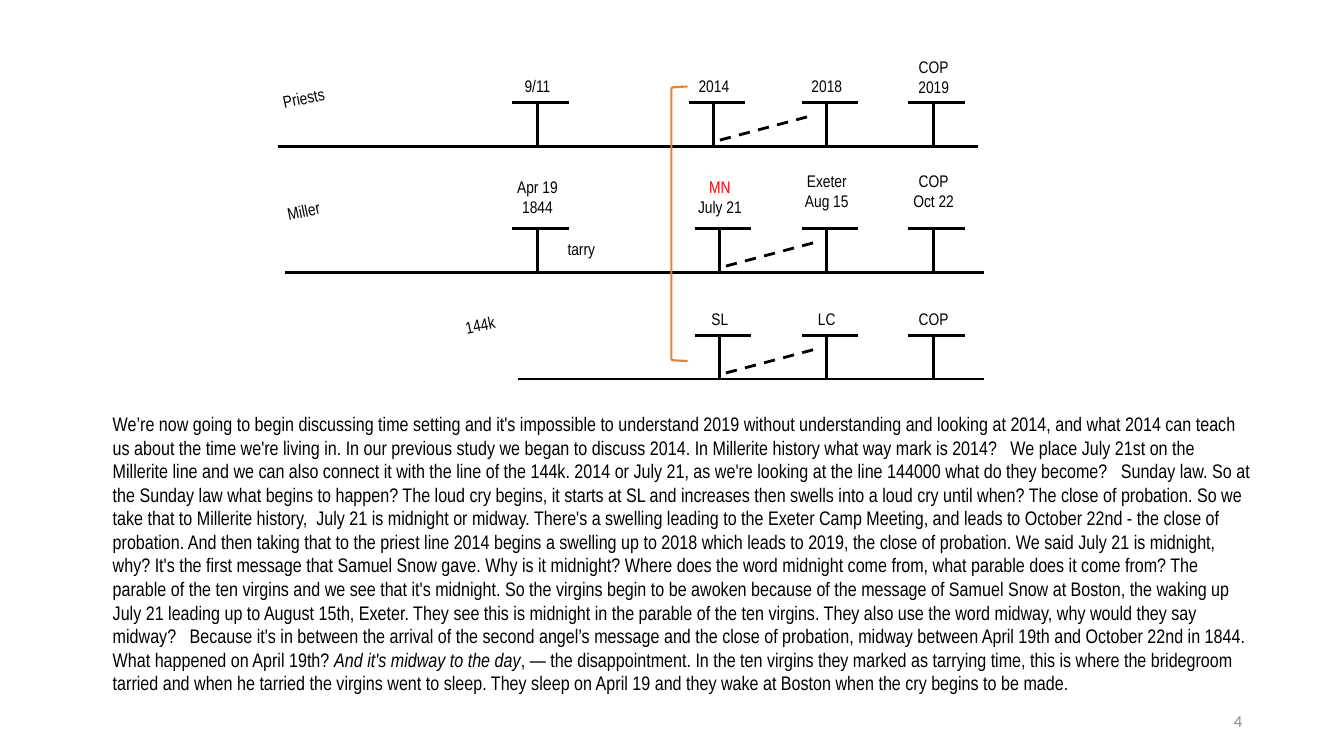
from pptx import Presentation
from pptx.dml.color import RGBColor
from pptx.enum.dml import MSO_LINE
from pptx.enum.shapes import MSO_CONNECTOR, MSO_SHAPE
from pptx.enum.text import MSO_ANCHOR, PP_ALIGN
from pptx.oxml.ns import qn
from pptx.util import Inches, Pt
from lxml.etree import SubElement

BLACK = RGBColor(0, 0, 0)
RED = RGBColor(0xFF, 0, 0)
ORANGE = RGBColor(0xED, 0x7D, 0x31)
GRAY = RGBColor(0x8C, 0x8C, 0x8C)

TIMELINES = [
    {"name": "Priests", "name_at": (2.64, 0.83), "bar": 1.02, "span": (2.76, 9.7),
     "swell": 7.08, "marks": [
         (5.33, 0.31, ["9/11"]), (7.08, 0.31, ["2014"]),
         (8.2, 0.31, ["2018"]), (9.26, 0.5, ["COP", "2019"])]},
    {"name": "Miller", "name_at": (2.64, 1.95), "bar": 2.27, "span": (2.83, 9.76),
     "swell": 7.14, "marks": [
         (5.33, 0.56, ["Apr 19 1844"]), (7.14, 0.56, ["MN", "July 21"]),
         (8.2, 0.62, ["Exeter", "Aug 15"]), (9.26, 0.62, ["COP", "Oct 22"])]},
    {"name": "144k", "name_at": (4.39, 3.08), "bar": 3.33, "span": (5.14, 9.76),
     "swell": 7.14, "marks": [
         (7.14, 0.31, ["SL"]), (8.2, 0.31, ["LC"]), (9.26, 0.31, ["COP"])]},
]
TARRY = ("tarry", 5.39, 2.33)
BRACKET = (6.66, 0.86, 0.16, 2.72)
LABEL_WIDTH, LABEL_HEIGHT = 0.75, 0.31
STEM = 0.43
BAR_LEFT, BAR_RIGHT = 0.25, 0.31
NAME_TILT = 348

QUESTIONS = [
    "We’re now going to begin discussing time setting and it's impossible to understand 2019 "
    "without understanding and looking at 2014, and what 2014 can teach us about the time we're "
    "living in. In our previous study we began to discuss 2014. In Millerite history what way "
    "mark is 2014?   We place July 21st on the Millerite line and we can also connect it with "
    "the line of the 144k. ",
    "2014 or July 21, as we're looking at the line 144000 what do they "
    "become?   Sunday law. So at the Sunday law what begins to happen? The loud cry begins, it "
    "starts at SL and increases then swells into a loud cry until when? The close of probation. ",
    "So we take that to Millerite history,  July 21 is midnight or midway. There's a swelling "
    "leading to the Exeter Camp Meeting, and leads to October 22nd - the close of probation. And "
    "then taking that to the priest line 2014 begins a swelling up to 2018 which leads to 2019, "
    "the close of probation. ",
    "We said July 21 is midnight, why? It's the first message that "
    "Samuel Snow gave. Why is it midnight? Where does the word midnight come from, what parable "
    "does it come from? The parable of the ten virgins and we see that it's midnight. ",
    "So the virgins begin to be awoken because of the message of Samuel Snow at Boston, the "
    "waking up July 21 leading up to August 15th, Exeter. They see this is midnight in the "
    "parable of the ten virgins. ",
    "They also use the word midway, why would they say midway?   Because it's in "
    "between the arrival of the second angel’s message and the close of probation, midway "
    "between April 19th and October 22nd in 1844. What happened on April 19th? ",
]
STUDY = [
    ("".join(QUESTIONS), False),
    ("And it's midway to the day", True),
    (", — the disappointment. In the ten virgins they marked as tarrying time, this is where the "
     "bridegroom tarried and when he tarried the virgins went to sleep. They sleep on April 19 "
     "and they wake at Boston when the cry begins to be made.", False),
]

LABEL_FONT = {"name": "Arial Narrow", "size": Pt(12)}
STUDY_FONT = {"name": "Arial Narrow", "size": Pt(14)}
NUMBER_FONT = {"name": "Calibri", "size": Pt(12)}
TIGHT = {f"margin_{side}": Inches(0.04) for side in ("left", "top", "right", "bottom")}

deck = Presentation()
deck.slide_width, deck.slide_height = Inches(13.33), Inches(7.5)
slide = deck.slides.add_slide(deck.slide_layouts[6])


def apply(target, values):
    for key, value in values.items():
        setattr(target, key, value)


def add_text(at, paragraphs, font, align, frame_format, color=BLACK):
    box = slide.shapes.add_textbox(*map(Inches, at))
    frame = box.text_frame
    apply(frame, {"word_wrap": True, **frame_format})
    for index, runs in enumerate(paragraphs):
        paragraph = frame.add_paragraph() if index else frame.paragraphs[0]
        paragraph.alignment = align
        for words, italic in runs:
            run = paragraph.add_run()
            run.text = words
            apply(run.font, {**font, "italic": italic})
            run.font.color.rgb = RED if words == "MN" else color
    return box


def add_label(lines, left, top, height=LABEL_HEIGHT):
    return add_text((left, top, LABEL_WIDTH, height), [[(line, False)] for line in lines],
                    LABEL_FONT, PP_ALIGN.CENTER, TIGHT)


def add_line(x1, y1, x2, y2, dash=None):
    line = slide.shapes.add_connector(MSO_CONNECTOR.STRAIGHT, *map(Inches, (x1, y1, x2, y2)))
    line.line.color.rgb = BLACK
    apply(line.line, {"width": Pt(2), "dash_style": dash})
    SubElement(line._element.spPr, qn("a:effectLst"))


add_text((9.42, 6.95, 3, 0.4), [[("4", False)]], NUMBER_FONT, PP_ALIGN.RIGHT,
         {"vertical_anchor": MSO_ANCHOR.MIDDLE}, GRAY)
add_text((1.02, 4.04, 11.5, 3.23), [STUDY], STUDY_FONT, PP_ALIGN.LEFT, {})

for timeline in TIMELINES:
    bar = timeline["bar"]
    base = bar + STEM
    start, end = timeline["span"]
    swell = timeline["swell"]
    add_line(start, base, end, base)
    add_label([timeline["name"]], *timeline["name_at"]).rotation = NAME_TILT
    for x, height, lines in timeline["marks"]:
        add_line(x, bar, x, base)
        add_line(x - BAR_LEFT, bar, x + BAR_RIGHT, bar)
        add_label(lines, x - LABEL_WIDTH / 2, bar - height, height)
    add_line(swell + 0.06, base - 0.06, swell + 1, base - 0.31, MSO_LINE.DASH)

tarry, tarry_left, tarry_top = TARRY
add_label([tarry], tarry_left, tarry_top)

bracket = slide.shapes.add_shape(MSO_SHAPE.LEFT_BRACKET, *map(Inches, BRACKET))
bracket.shadow.inherit = False
bracket.fill.background()
bracket.line.color.rgb = ORANGE
bracket.line.width = Pt(1.5)

deck.save("out.pptx")
